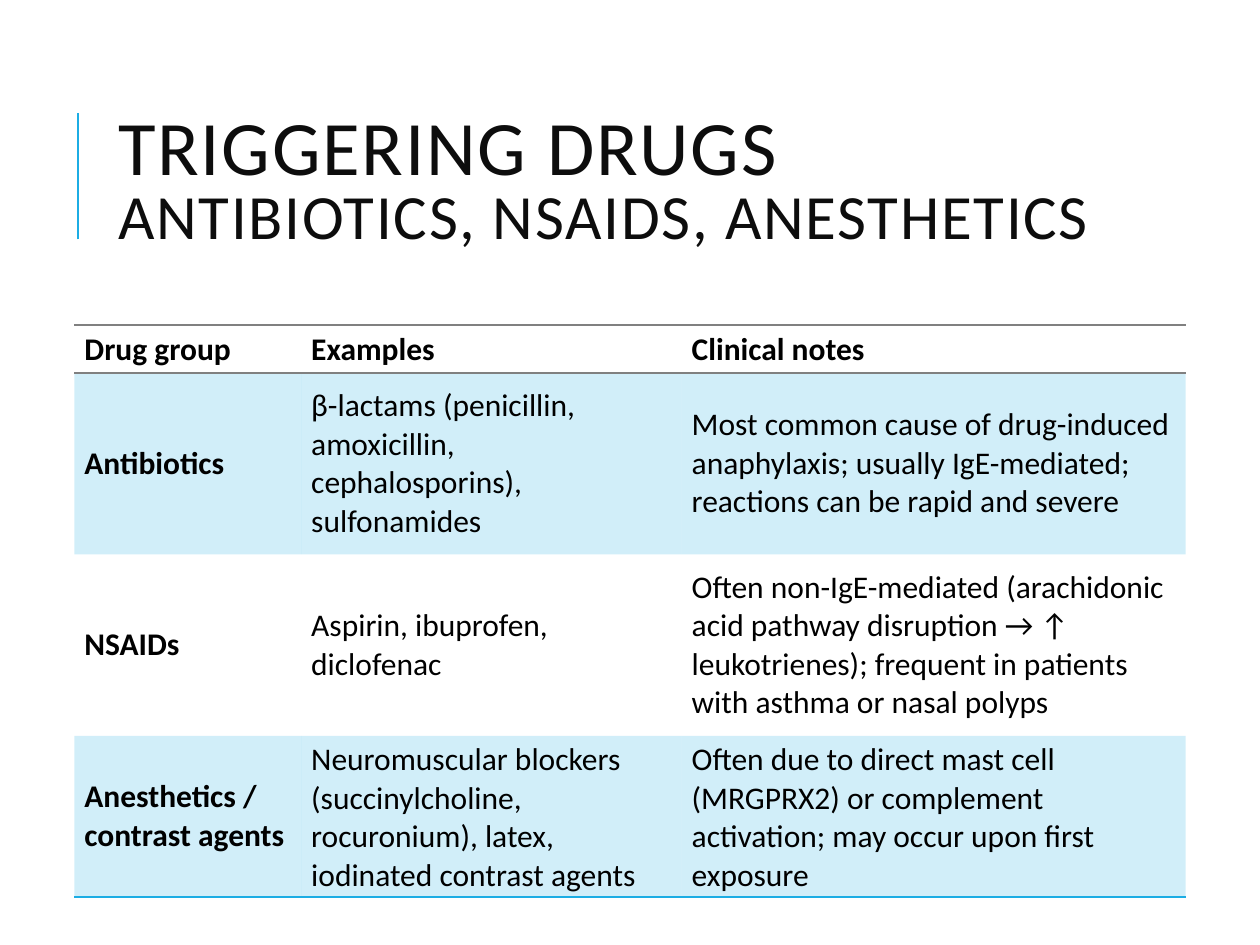
from dataclasses import dataclass

from lxml.etree import SubElement
from pptx import Presentation
from pptx.dml.color import RGBColor
from pptx.enum.shapes import MSO_CONNECTOR as Connector
from pptx.enum.text import MSO_ANCHOR as Anchor
from pptx.oxml.ns import qn
from pptx.util import Inches, Pt

TITLE = "TRIGGERING DRUGS"
SUBTITLE = "ANTIBIOTICS, NSAIDS, ANESTHETICS"
ROWS = [
    ("Drug group", "Examples", "Clinical notes"),
    ("Antibiotics",
     "β-lactams (penicillin, amoxicillin, cephalosporins), sulfonamides",
     "Most common cause of drug-induced anaphylaxis; usually IgE-mediated; "
     "reactions can be rapid and severe"),
    ("NSAIDs",
     "Aspirin, ibuprofen, diclofenac",
     "Often non-IgE-mediated (arachidonic acid pathway disruption → ↑ "
     "leukotrienes); frequent in patients with asthma or nasal polyps"),
    ("Anesthetics / contrast agents",
     "Neuromuscular blockers (succinylcholine, rocuronium), latex, "
     "iodinated contrast agents",
     "Often due to direct mast cell (MRGPRX2) or complement activation; "
     "may occur upon first exposure"),
]
COL_WIDTHS = (1.8, 3.02, 4)
ROW_HEIGHTS = (0.38, 1.44, 1.44, 1.28)
NO_STYLE = "{2D5ABB26-0587-4C30-8999-92F81FD0307C}"


@dataclass(frozen=True)
class Theme:
    font: str = "Calibri"
    accent: str = "1CADE4"
    rule: str = "808080"
    title: str = "0D0D0D"
    text: str = "000000"
    title_size: int = 44
    subtitle_size: int = 36
    body_size: int = 18
    band_alpha: int = 20


THEME = Theme()


def add_run(p, text, size, color, bold=False):
    r = p.add_run()
    r.text = text
    r.font.name = THEME.font
    r.font.size = Pt(size)
    r.font.bold = bold
    r.font.color.rgb = RGBColor.from_string(color)
    return r


def add_accent_bar(slide):
    bar = slide.shapes.add_connector(
        Connector.STRAIGHT, Inches(0.62), Inches(1.9), Inches(0.62), Inches(0.9))
    bar.line.color.rgb = RGBColor.from_string(THEME.accent)
    bar.line.width = Pt(1.5)
    SubElement(bar.element.spPr, qn("a:effectLst"))


def add_title(slide):
    box = slide.shapes.add_textbox(
        Inches(0.84), Inches(0.64), Inches(7.97), Inches(1.64))
    tf = box.text_frame
    tf.word_wrap = True
    tf.vertical_anchor = Anchor.MIDDLE
    p = tf.paragraphs[0]
    p.line_spacing = 0.8
    runs = [add_run(p, TITLE, THEME.title_size, THEME.title)]
    p.add_line_break()
    runs.append(add_run(p, SUBTITLE, THEME.subtitle_size, THEME.title))
    for r in runs:
        r.font._element.set("spc", "100")


def add_border(cell, side, color):
    """Draw a 1 pt rule on one side ("T" or "B"); call before filling the cell."""
    ln = SubElement(cell._tc.get_or_add_tcPr(), qn(f"a:ln{side}"), w=str(Pt(1)))
    fill = SubElement(ln, qn("a:solidFill"))
    SubElement(fill, qn("a:srgbClr"), val=color)


def fill_cell(cell, banded):
    if not banded:
        cell.fill.background()
        return
    cell.fill.solid()
    cell.fill.fore_color.rgb = RGBColor.from_string(THEME.accent)
    color = cell._tc.tcPr.find(qn("a:solidFill")).find(qn("a:srgbClr"))
    SubElement(color, qn("a:alpha"), val=str(THEME.band_alpha * 1000))


def add_drug_table(slide):
    frame = slide.shapes.add_table(
        len(ROWS), len(COL_WIDTHS), Inches(0.59), Inches(2.58),
        Inches(sum(COL_WIDTHS)), Inches(sum(ROW_HEIGHTS)))
    table = frame.table
    table._tbl.tblPr.find(qn("a:tableStyleId")).text = NO_STYLE
    for column, width in zip(table.columns, COL_WIDTHS):
        column.width = Inches(width)
    for row, height in zip(table.rows, ROW_HEIGHTS):
        row.height = Inches(height)

    for i, texts in enumerate(ROWS):
        for j, text in enumerate(texts):
            cell = table.cell(i, j)
            cell.vertical_anchor = Anchor.MIDDLE
            cell.margin_left = cell.margin_right = Inches(0.08)
            cell.margin_top = cell.margin_bottom = Inches(0.04)
            add_run(cell.text_frame.paragraphs[0], text, THEME.body_size,
                    THEME.text, bold=i == 0 or j == 0)
            if i == 0:
                add_border(cell, "T", THEME.rule)
                add_border(cell, "B", THEME.rule)
            elif i == len(ROWS) - 1:
                add_border(cell, "B", THEME.accent)
            fill_cell(cell, banded=i % 2 == 1)


def main():
    prs = Presentation()
    prs.slide_width, prs.slide_height = Inches(10), Inches(7.5)
    slide = prs.slides.add_slide(prs.slide_layouts[6])
    add_accent_bar(slide)
    add_title(slide)
    add_drug_table(slide)
    prs.save("out.pptx")


if __name__ == "__main__":
    main()
